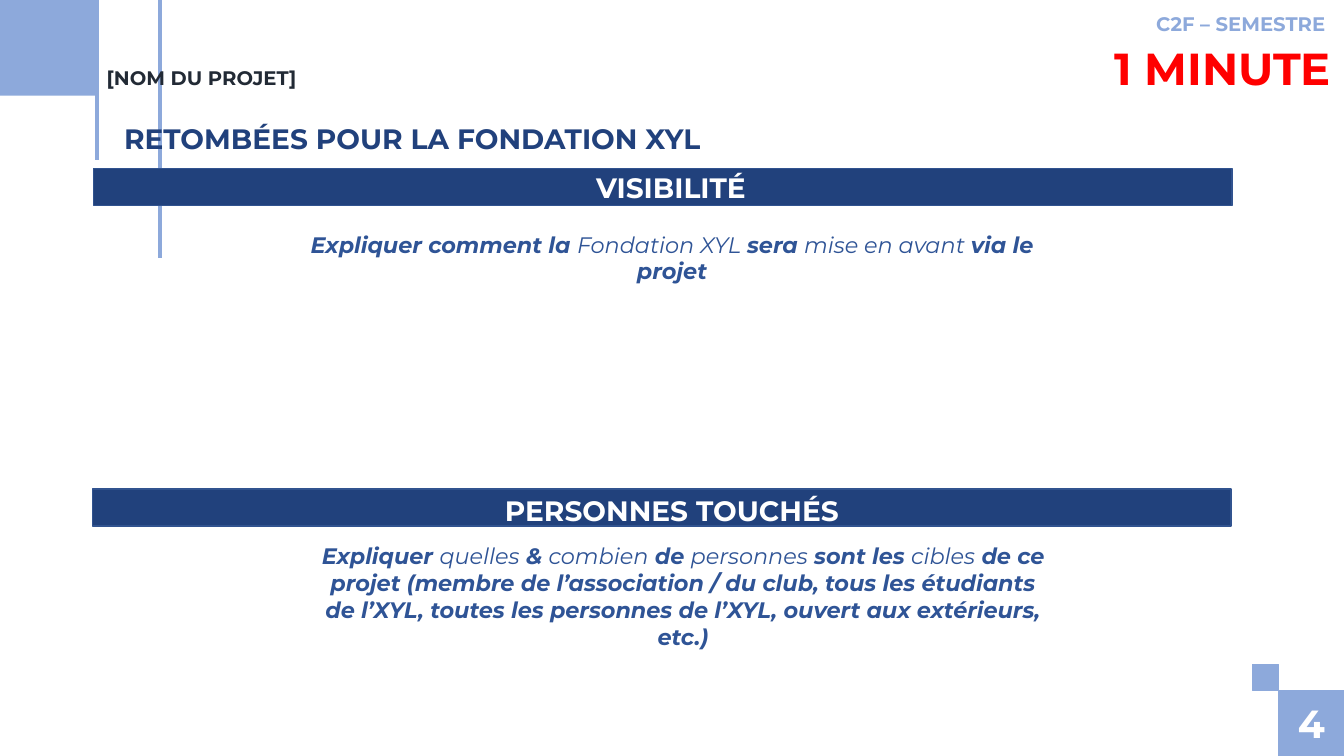
from lxml.etree import SubElement
from pptx import Presentation
from pptx.dml.color import RGBColor
from pptx.enum.shapes import MSO_CONNECTOR, MSO_SHAPE
from pptx.enum.text import MSO_ANCHOR, PP_ALIGN
from pptx.oxml.ns import qn
from pptx.util import Pt

PX = 9144
LIGHT_BLUE = "8DA9DB"
NAVY = "21417C"
BAR_EDGE = "31538F"
BODY_BLUE = "2F5496"
WHITE = "FFFFFF"


def px(*lengths):
    """Turn whole pixel lengths into EMU."""
    return [length * PX for length in lengths]


def color(hex_value):
    """Return the colour of a hex string."""
    return RGBColor.from_string(hex_value)


def add_block(slide, box, fill, edge=None):
    """Add a flat rectangle with an optional thin edge."""
    shape = slide.shapes.add_shape(MSO_SHAPE.RECTANGLE, *px(*box))
    shape.shadow.inherit = False
    shape.fill.solid()
    shape.fill.fore_color.rgb = color(fill)
    if edge:
        shape.line.color.rgb = color(edge)
        shape.line.width = Pt(1)
    else:
        shape.line.fill.background()


def add_rule(slide, x, bottom):
    """Add a vertical line that hangs from the top of the slide."""
    connector = slide.shapes.add_connector(MSO_CONNECTOR.STRAIGHT, *px(x, 0, x, bottom))
    connector.line.color.rgb = color(LIGHT_BLUE)
    connector.line.width = Pt(3)
    SubElement(connector._element.spPr, qn("a:effectLst"))


def write_text(shape, runs, size, hex_value, align, italic=False):
    """Fill a shape with runs that alternate between bold and regular."""
    frame = shape.text_frame
    frame_format = {
        "word_wrap": True,
        "vertical_anchor": MSO_ANCHOR.TOP,
        "margin_left": 10 * PX,
        "margin_right": 10 * PX,
        "margin_top": 5 * PX,
        "margin_bottom": 5 * PX,
    }
    for name, value in frame_format.items():
        setattr(frame, name, value)
    paragraph = frame.paragraphs[0]
    paragraph.alignment = align
    paragraph.line_spacing = 1.0
    paragraph.space_before = Pt(0)
    for index, text in enumerate(runs):
        run = paragraph.add_run()
        run.text = text
        run_format = {
            "name": "Montserrat",
            "size": Pt(size),
            "bold": index % 2 == 0,
            "italic": italic,
        }
        for name, value in run_format.items():
            setattr(run.font, name, value)
        run.font.color.rgb = color(hex_value)


def add_text(slide, box, runs, size, hex_value, align=PP_ALIGN.CENTER, italic=False):
    """Add a text box."""
    shape = slide.shapes.add_textbox(*px(*box))
    write_text(shape, runs, size, hex_value, align, italic)


def place_title(slide, box, text):
    """Move the title placeholder in front of the rules and format it."""
    title = slide.shapes.title
    title.left, title.top, title.width, title.height = px(*box)
    write_text(title, [text], 20, NAVY, PP_ALIGN.LEFT)
    slide.shapes._spTree.append(title._element)


def add_section(slide, bar, heading_box, heading, body_box, body):
    """Add a heading bar and the instructions below it."""
    add_block(slide, bar, NAVY, BAR_EDGE)
    add_text(slide, heading_box, [heading], 20, WHITE)
    add_text(slide, body_box, body, 16, BODY_BLUE, italic=True)


def main():
    """Build the slide and save it."""
    presentation = Presentation()
    presentation.slide_width, presentation.slide_height = px(1333, 750)
    slide = presentation.slides.add_slide(presentation.slide_layouts[5])

    add_block(slide, (-1, -1, 96, 96), LIGHT_BLUE)
    add_rule(slide, 96, 159)
    add_rule(slide, 159, 256)
    add_text(slide, (96, 60, 655, 34), ["[NOM DU PROJET]"], 14, "222A35", PP_ALIGN.LEFT)
    add_block(slide, (1268, 685, 65, 65), LIGHT_BLUE, LIGHT_BLUE)
    add_block(slide, (1242, 659, 26, 26), LIGHT_BLUE, LIGHT_BLUE)
    add_text(slide, (1268, 689, 65, 57), ["4"], 28, WHITE)
    add_text(slide, (696, 7, 634, 34), ["C2F – SEMESTRE "], 14, LIGHT_BLUE, PP_ALIGN.RIGHT)
    place_title(slide, (113, 116, 1129, 44), "RETOMBÉES POUR LA FONDATION XYL")

    visibility = ["Expliquer comment la ", "Fondation XYL ", "sera ", "mise en avant ", "via le projet"]
    add_section(slide, (93, 167, 1129, 37), (470, 164, 391, 44), "VISIBILITÉ",
                (292, 224, 749, 64), visibility)
    audience = [
        "Expliquer ", "quelles", " & ", "combien", " de ", "personnes", " sont les ", "cibles",
        " de ce projet (membre de l’association / du club, tous les étudiants de l’XYL, "
        "toutes les personnes de l’XYL, ouvert aux extérieurs, etc.)",
    ]
    add_section(slide, (92, 485, 1129, 37), (450, 485, 433, 44), "PERSONNES TOUCHÉS",
                (303, 533, 749, 91), audience)
    add_text(slide, (1093, 36, 237, 64), ["1 MINUTE"], 32, "FF0000", PP_ALIGN.RIGHT)

    presentation.save("out.pptx")


if __name__ == "__main__":
    main()
